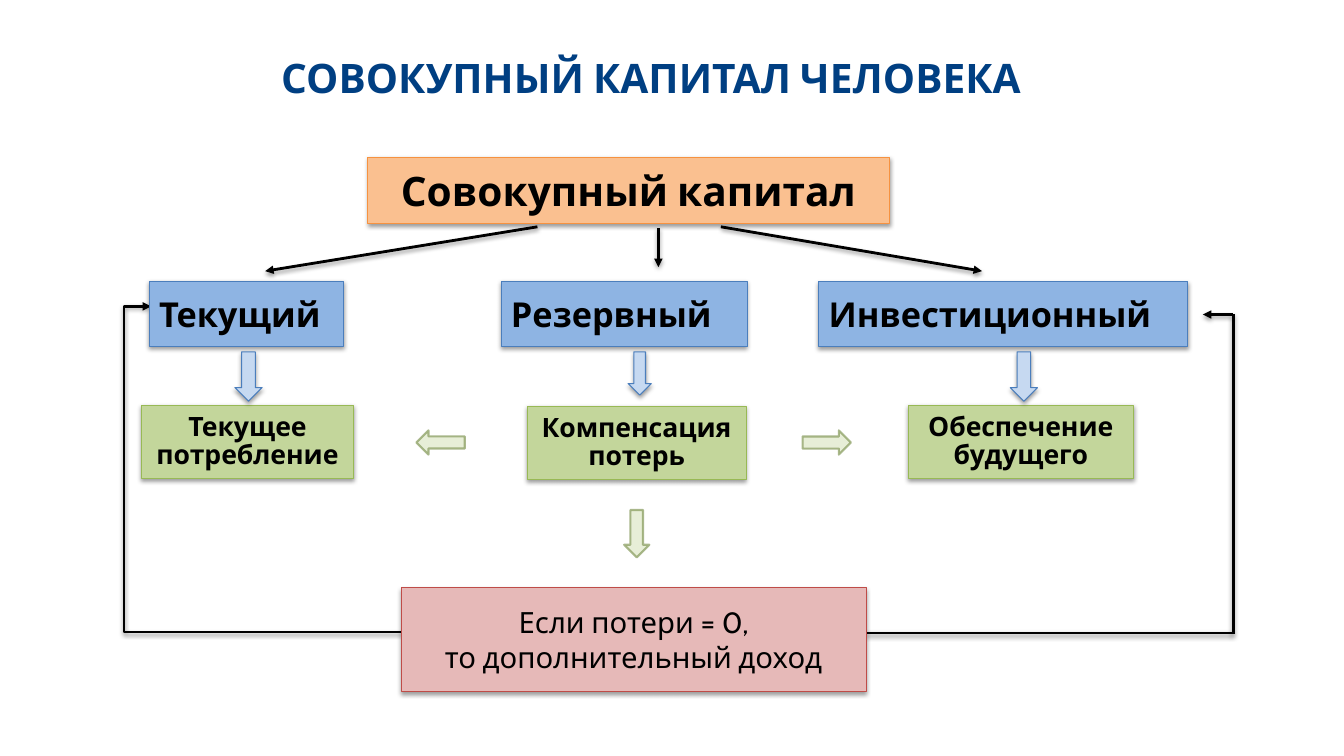
from dataclasses import dataclass
from typing import NamedTuple, Optional

from lxml.etree import SubElement
from pptx import Presentation
from pptx.dml.color import RGBColor
from pptx.enum.shapes import MSO_CONNECTOR, MSO_SHAPE
from pptx.enum.text import MSO_ANCHOR, PP_ALIGN
from pptx.oxml.ns import qn
from pptx.util import Pt

EMU_PER_PX = 9144  # 100 px to the inch


@dataclass(frozen=True)
class Theme:
    font: str = "Cabin"
    title: str = "003F82"
    ink: str = "000000"
    title_size: float = 29
    kind_size: float = 24.5
    purpose_size: float = 19
    outcome_size: float = 20.9
    thin: float = 0.75
    outline: float = 1.5
    connector: float = 2


THEME = Theme()


class BoxStyle(NamedTuple):
    fill: str
    line: str
    size: float
    bold: bool = True
    align: PP_ALIGN = PP_ALIGN.CENTER
    side_inset: int = 10
    end_inset: int = 5
    spacing: Optional[float] = None


class Box(NamedTuple):
    text: str
    left: int
    top: int
    width: int
    height: int
    style: BoxStyle


class ArrowStyle(NamedTuple):
    fill: str
    line: str
    weight: float
    opacity: int = 100
    shadow: bool = True


class BlockArrow(NamedTuple):
    left: int
    top: int
    width: int
    height: int
    style: ArrowStyle
    rotation: int = 0


class Link(NamedTuple):
    start: tuple[int, int]
    end: tuple[int, int]
    arrowhead: bool = True
    bend: Optional[float] = None


TOTAL = BoxStyle("FAC090", "F69240", THEME.title_size)
KIND = BoxStyle("8EB4E3", "4B7EBC", THEME.kind_size, align=PP_ALIGN.LEFT, end_inset=8)
PURPOSE = BoxStyle("C3D69B", "98B955", THEME.purpose_size,
                   side_inset=5, end_inset=4, spacing=0.9)
OUTCOME = BoxStyle("E6B9B8", "BF4C48", THEME.outcome_size, bold=False)
BLUE = ArrowStyle("C6D9F1", "4B7EBC", THEME.thin)
PALE = ArrowStyle("D7E4BD", "738A42", THEME.outline, opacity=60, shadow=False)

LINKS = [
    Link((653, 226), (653, 265)),
    Link((533, 225), (263, 269)),
    Link((715, 225), (974, 269)),
    Link((398, 627), (150, 304), bend=1.109),
    Link((1223, 628), (859, 628), arrowhead=False),
    Link((1223, 312), (1223, 629), arrowhead=False),
    Link((1223, 312), (1193, 312)),
]
BOXES = [
    Box("Совокупный капитал", 365, 156, 517, 66, TOTAL),
    Box("Текущий", 148, 279, 193, 65, KIND),
    Box("Резервный", 497, 279, 244, 65, KIND),
    Box("Инвестиционный", 812, 279, 366, 65, KIND),
    Box("Текущее\nпотребление", 140, 402, 211, 73, PURPOSE),
    Box("Компенсация\nпотерь", 523, 403, 217, 73, PURPOSE),
    Box("Обеспечение\nбудущего", 901, 402, 223, 73, PURPOSE),
    Box("Если потери = 0,\nто дополнительный доход", 398, 583, 461, 103, OUTCOME),
]
BLOCK_ARROWS = [
    BlockArrow(233, 349, 27, 49, BLUE),
    BlockArrow(623, 349, 23, 43, BLUE),
    BlockArrow(1002, 349, 27, 49, BLUE),
    BlockArrow(808, 415, 24, 48, PALE, rotation=270),
    BlockArrow(619, 506, 25, 47, PALE),
    BlockArrow(425, 415, 24, 48, PALE, rotation=90),
]


def px(*lengths: int) -> list[int]:
    return [length * EMU_PER_PX for length in lengths]


def rgb(colour: str) -> RGBColor:
    return RGBColor.from_string(colour)


def add_shadow(properties) -> None:
    """Give the shape properties a soft shadow straight below."""
    effects = properties.find(qn("a:effectLst"))
    if effects is None:
        effects = SubElement(properties, qn("a:effectLst"))
    shadow = SubElement(effects, qn("a:outerShdw"), blurRad="40000", dist="20000",
                        dir="5400000", rotWithShape="0")
    colour = SubElement(shadow, qn("a:srgbClr"), val=THEME.ink)
    SubElement(colour, qn("a:alpha"), val="38000")


def write(frame, text: str, size: float, colour: str, bold: bool,
          align: PP_ALIGN, spacing: Optional[float] = None) -> None:
    frame.text = text
    frame.word_wrap = True
    for para in frame.paragraphs:
        para.alignment = align
        if spacing:
            para.line_spacing = spacing
        for span in para.runs:
            span.font.name = THEME.font
            span.font.size = Pt(size)
            span.font.bold = bold
            span.font.color.rgb = rgb(colour)


def add_filled(page, kind: MSO_SHAPE, bounds: tuple[int, int, int, int],
               fill: str, line: str, weight: float):
    shape = page.shapes.add_shape(kind, *px(*bounds))
    shape.shadow.inherit = False
    shape.fill.solid()
    shape.fill.fore_color.rgb = rgb(fill)
    shape.line.color.rgb = rgb(line)
    shape.line.width = Pt(weight)
    return shape


def add_title(page, text: str) -> None:
    title = page.shapes.add_textbox(*px(108, 48, 1076, 66))
    write(title.text_frame, text, THEME.title_size, THEME.title, True, PP_ALIGN.CENTER)


def add_box(page, box: Box) -> None:
    style = box.style
    shape = add_filled(page, MSO_SHAPE.RECTANGLE, box[1:5],
                       style.fill, style.line, THEME.thin)
    add_shadow(shape._element.spPr)
    frame = shape.text_frame
    frame.vertical_anchor = MSO_ANCHOR.MIDDLE
    frame.margin_left, frame.margin_right = px(style.side_inset, style.side_inset)
    frame.margin_top, frame.margin_bottom = px(style.end_inset, style.end_inset)
    write(frame, box.text, style.size, THEME.ink, style.bold, style.align, style.spacing)


def add_block_arrow(page, arrow: BlockArrow) -> None:
    style = arrow.style
    shape = add_filled(page, MSO_SHAPE.DOWN_ARROW, arrow[:4],
                       style.fill, style.line, style.weight)
    shape.rotation = arrow.rotation
    if style.shadow:
        add_shadow(shape._element.spPr)
    if style.opacity < 100:
        for colour in shape._element.spPr.iter(qn("a:srgbClr")):
            SubElement(colour, qn("a:alpha"), val=str(style.opacity * 1000))


def add_link(page, link: Link) -> None:
    kind = MSO_CONNECTOR.ELBOW if link.bend else MSO_CONNECTOR.STRAIGHT
    connector = page.shapes.add_connector(kind, *px(*link.start, *link.end))
    connector.line.color.rgb = rgb(THEME.ink)
    connector.line.width = Pt(THEME.connector)
    properties = connector._element.spPr
    if link.arrowhead:
        SubElement(properties.find(qn("a:ln")), qn("a:tailEnd"), type="triangle")
    if link.bend:
        guides = properties.find(qn("a:prstGeom")).find(qn("a:avLst"))
        SubElement(guides, qn("a:gd"), name="adj1", fmla=f"val {round(link.bend * 100000)}")
    add_shadow(properties)


def main() -> None:
    deck = Presentation()
    deck.slide_width, deck.slide_height = px(1333, 750)
    page = deck.slides.add_slide(deck.slide_layouts[6])
    add_title(page, "СОВОКУПНЫЙ КАПИТАЛ ЧЕЛОВЕКА")
    for link in LINKS:
        add_link(page, link)
    for box in BOXES:
        add_box(page, box)
    for arrow in BLOCK_ARROWS:
        add_block_arrow(page, arrow)
    deck.save("out.pptx")


if __name__ == "__main__":
    main()
